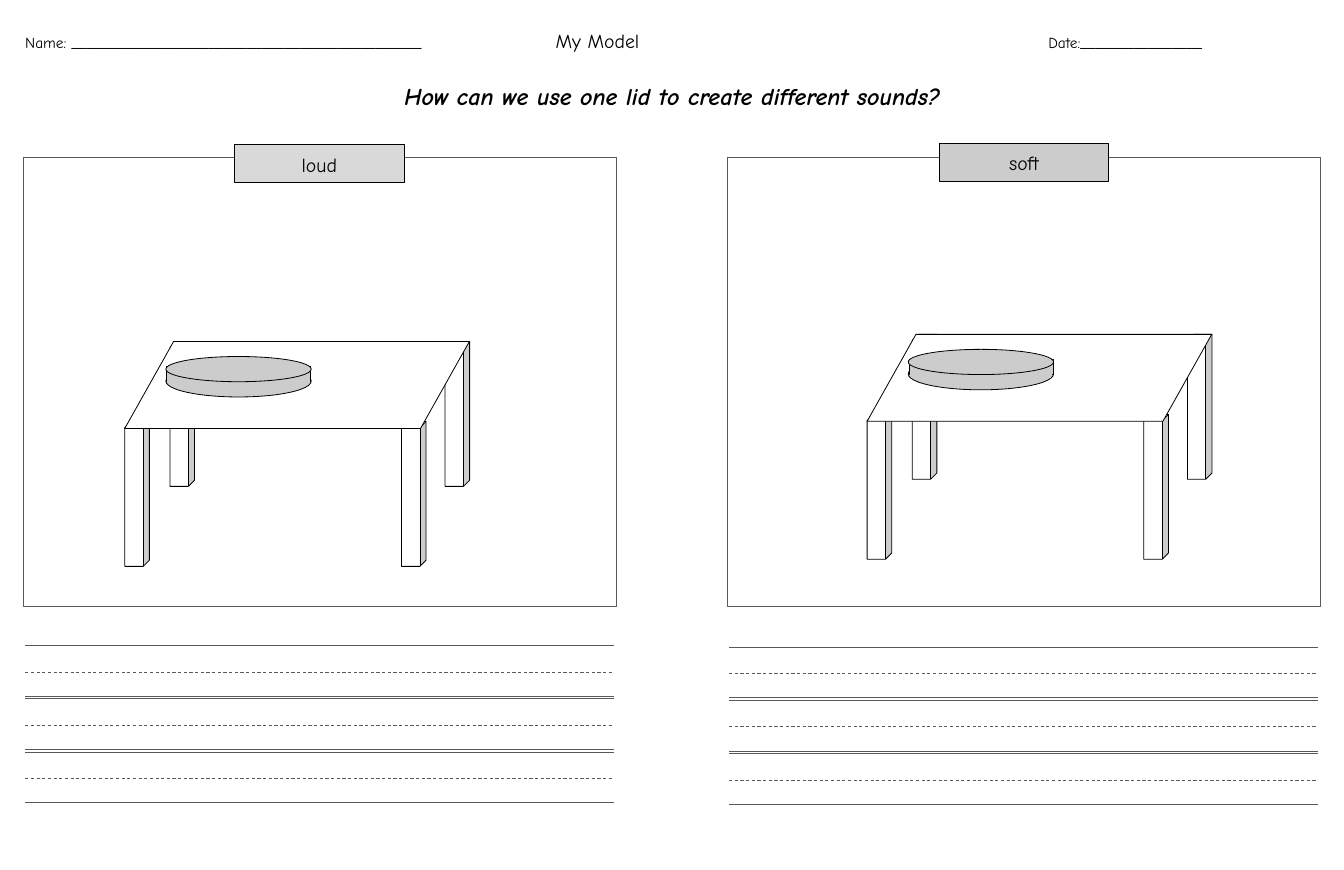
from lxml.etree import SubElement
from pptx import Presentation
from pptx.dml.color import RGBColor
from pptx.enum.dml import MSO_LINE
from pptx.enum.shapes import MSO_CONNECTOR, MSO_SHAPE as Preset
from pptx.enum.text import MSO_ANCHOR, PP_ALIGN
from pptx.oxml.ns import qn
from pptx.util import Cm, Pt

BLACK = RGBColor(0x00, 0x00, 0x00)
WHITE = RGBColor(0xFF, 0xFF, 0xFF)
RULE_GRAY = RGBColor(0x59, 0x59, 0x59)
LID_GRAY = RGBColor(0xCC, 0xCC, 0xCC)
LABEL_GRAY = RGBColor(0xD9, 0xD9, 0xD9)
FONT = "Comic Neue"

# All places and sizes are in centimetres.
HEADER = [
    ("Name: ______________________________________________", dict(size=Pt(14))),
    ("\tMy Model", dict(size=Pt(18))),
    ("\tDate:________________", dict(size=Pt(14))),
]
HEADER_BOX = (0.56, 0.66, 42.04, 1.73)
HEADER_TABS = (17.04, 32.87)
QUESTION = [("How can we use one lid to create different sounds?",
             dict(size=Pt(22), bold=True, italic=True))]
QUESTION_BOX = (9.02, 2.21, 25.15, 1.73)

PANELS = [
    dict(label="loud", label_fill=LABEL_GRAY, label_at=(7.54, 4.65),
         frame_at=(0.74, 5.05), table_at=(4.01, 10.97), writing_at=(0.81, 20.73)),
    dict(label="soft", label_fill=LID_GRAY, label_at=(30.18, 4.6),
         frame_at=(23.37, 5.05), table_at=(27.86, 10.74), writing_at=(23.42, 20.78)),
]
FRAME_SIZE = (19.05, 14.43)
LABEL_SIZE = (5.44, 1.22)

# Parts of the table and the lid, measured from the table's top left corner.
LEGS = [(0, 2.57), (1.45, 0), (10.29, 0), (8.89, 2.57)]
LEG_SIZE = (0.79, 4.65)
TABLETOP_SIZE = (11.07, 2.79)
TABLETOP_SLANT = 0.562
LID_BOTTOM = (1.32, 0.76, 4.67, 1.02)
LID_SIDE = (1.35, 0.81, 4.62, 0.48)
LID_SEAM = (1.37, 1.26, 4.57)
LID_TOP = (1.32, 0.48, 4.67, 0.81)

WRITING_ROWS = 3
ROW_PITCH = 1.71
ROW_RULES = [(0, None), (0.85, MSO_LINE.DASH), (1.63, None)]
RULE_LENGTH = 18.92


def shifted(origin, box):
    """Move a box's place by the origin and keep its size."""
    return (origin[0] + box[0], origin[1] + box[1], *box[2:])


def add_preset(slide, preset, box, fill=None, line=BLACK):
    shape = slide.shapes.add_shape(preset, *map(Cm, box))
    shape.shadow.inherit = False
    if fill is None:
        shape.fill.background()
    else:
        shape.fill.solid()
        shape.fill.fore_color.rgb = fill
    shape.line.color.rgb = line
    shape.line.width = Pt(0.75)
    return shape


def add_rule(slide, x, y, length, color=RULE_GRAY, width=0.75, dash=None):
    """Draw a horizontal line."""
    rule = slide.shapes.add_connector(
        MSO_CONNECTOR.STRAIGHT, Cm(x), Cm(y), Cm(x + length), Cm(y))
    rule.line.color.rgb = color
    rule.line.width = Pt(width)
    if dash:
        rule.line.dash_style = dash
    SubElement(rule._element.spPr, qn("a:effectLst"))


def write(shape, runs, align=PP_ALIGN.LEFT, spacing=None):
    """Fill a shape with one paragraph of formatted runs."""
    frame = shape.text_frame
    margins = dict.fromkeys(
        ("margin_left", "margin_top", "margin_right", "margin_bottom"), Cm(0.25))
    for name, value in dict(margins, word_wrap=True,
                            vertical_anchor=MSO_ANCHOR.TOP).items():
        setattr(frame, name, value)
    paragraph = frame.paragraphs[0]
    paragraph.alignment = align
    if spacing:
        paragraph.line_spacing = spacing
    for text, formats in runs:
        run = paragraph.add_run()
        run.text = text
        run.font.color.rgb = BLACK
        for name, value in dict(formats, name=FONT).items():
            setattr(run.font, name, value)
    return paragraph


def add_header(slide):
    paragraph = write(slide.shapes.add_textbox(*map(Cm, HEADER_BOX)), HEADER)
    tabs = SubElement(paragraph._p.get_or_add_pPr(), qn("a:tabLst"))
    for position in HEADER_TABS:
        SubElement(tabs, qn("a:tab"), pos=str(Cm(position)), algn="l")


def add_table_with_lid(slide, origin):
    for leg in LEGS:
        add_preset(slide, Preset.CUBE, shifted(origin, leg + LEG_SIZE), WHITE)
    tabletop = add_preset(slide, Preset.PARALLELOGRAM, origin + TABLETOP_SIZE, WHITE)
    tabletop.adjustments[0] = TABLETOP_SLANT
    add_preset(slide, Preset.OVAL, shifted(origin, LID_BOTTOM), LID_GRAY)
    add_preset(slide, Preset.RECTANGLE, shifted(origin, LID_SIDE), LID_GRAY)
    add_rule(slide, *shifted(origin, LID_SEAM), color=LID_GRAY, width=3)
    add_preset(slide, Preset.OVAL, shifted(origin, LID_TOP), LID_GRAY)


def add_writing_lines(slide, origin):
    left, top = origin
    for row in range(WRITING_ROWS):
        for offset, dash in ROW_RULES:
            add_rule(slide, left, top + row * ROW_PITCH + offset, RULE_LENGTH, dash=dash)


def add_panel(slide, panel):
    add_preset(slide, Preset.RECTANGLE, panel["frame_at"] + FRAME_SIZE, line=RULE_GRAY)
    add_writing_lines(slide, panel["writing_at"])
    label = add_preset(slide, Preset.RECTANGLE, panel["label_at"] + LABEL_SIZE,
                       panel["label_fill"])
    write(label, [(panel["label"], dict(size=Pt(18)))], PP_ALIGN.CENTER)
    add_table_with_lid(slide, panel["table_at"])


def main():
    deck = Presentation()
    deck.slide_width, deck.slide_height = Cm(43.18), Cm(27.94)
    slide = deck.slides.add_slide(deck.slide_layouts[6])
    add_header(slide)
    question = slide.shapes.add_textbox(*map(Cm, QUESTION_BOX))
    write(question, QUESTION, PP_ALIGN.CENTER, spacing=1.15)
    for panel in PANELS:
        add_panel(slide, panel)
    deck.save("out.pptx")


if __name__ == "__main__":
    main()
